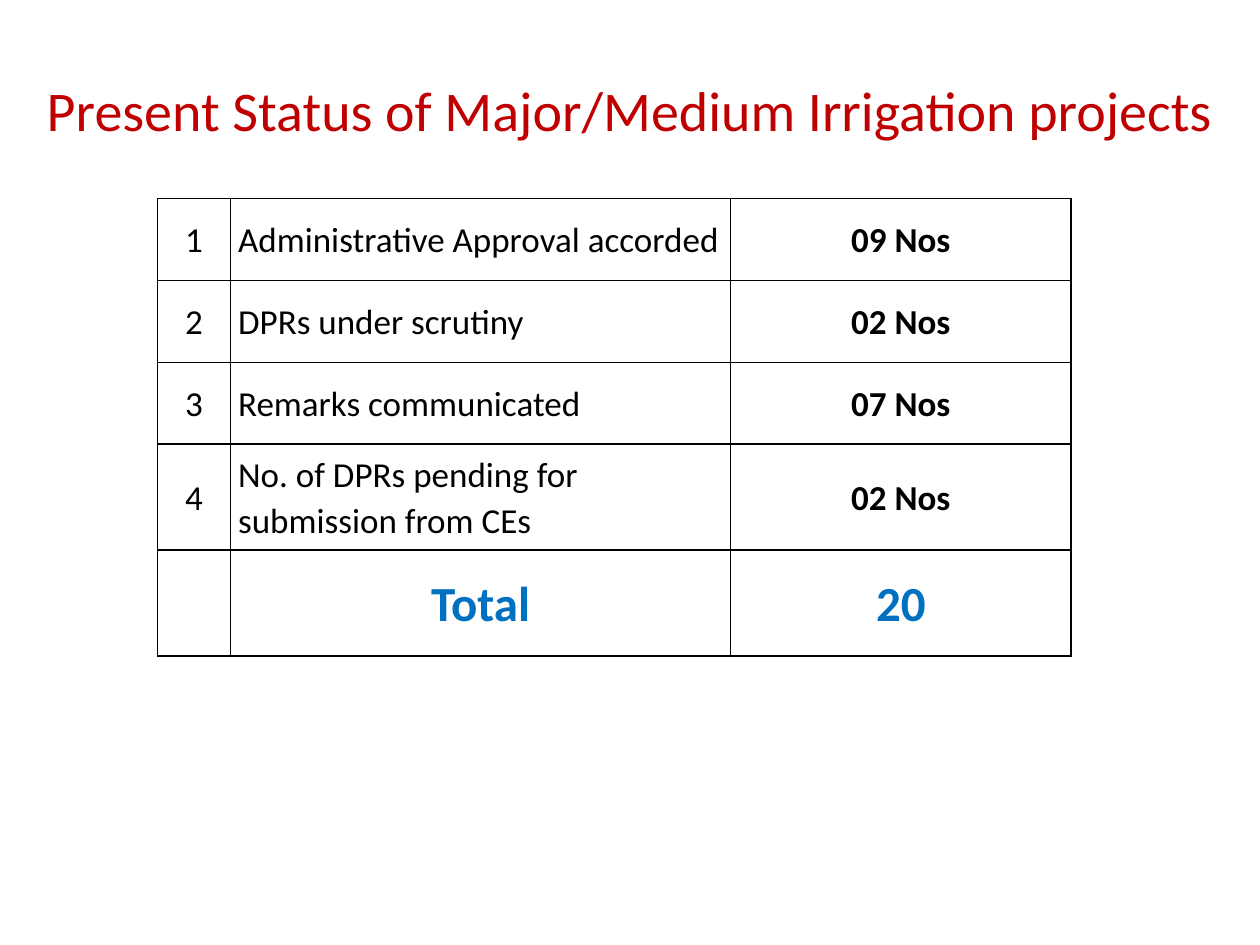
from dataclasses import dataclass

from lxml.etree import SubElement
from pptx import Presentation
from pptx.dml.color import RGBColor
from pptx.enum.text import MSO_ANCHOR as Anchor, PP_ALIGN as Align
from pptx.oxml.ns import qn
from pptx.util import Inches, Pt

FONT = "Calibri"
BLACK, WHITE, RED, BLUE = "000000", "FFFFFF", "C00000", "0070C0"
SLIDE_WIDTH, SLIDE_HEIGHT = Inches(10), Inches(7.5)
COLUMN_SHARES = (0.058, 0.397, 0.27)
SHORT_ROW, TALL_ROW = Inches(0.65), Inches(0.84)


@dataclass
class Style:
    size: int
    color: str = BLACK
    bold: bool = False
    align: Align = Align.CENTER


@dataclass
class Entry:
    texts: tuple[str, str, str]
    styles: tuple[Style, Style, Style]
    height: int = SHORT_ROW


NUMBER = Style(20)
LABEL = Style(20, align=Align.LEFT)
COUNT = Style(20, bold=True)
TOTAL = Style(28, BLUE, True)
ITEM = (NUMBER, LABEL, COUNT)

ENTRIES = [
    Entry(("1", "Administrative Approval accorded", "09 Nos"), ITEM),
    Entry(("2", "DPRs under scrutiny", "02 Nos"), ITEM),
    Entry(("3", "Remarks communicated", "07 Nos"), ITEM),
    Entry(("4", "No. of DPRs pending for submission from CEs", "02 Nos"), ITEM, TALL_ROW),
    Entry(("", "Total", "20"), (NUMBER, TOTAL, TOTAL), TALL_ROW),
]


def rgb(value: str) -> RGBColor:
    return RGBColor.from_string(value)


def across(share: float) -> int:
    return round(SLIDE_WIDTH * share)


def down(share: float) -> int:
    return round(SLIDE_HEIGHT * share)


def write(para, text: str, style: Style) -> None:
    para.alignment = style.align
    if not text:
        return
    run = para.add_run()
    run.text = text
    run.font.name = FONT
    run.font.size = Pt(style.size)
    run.font.bold = style.bold
    run.font.color.rgb = rgb(style.color)


def add_borders(cell, color: str, width: float) -> None:
    properties = cell._tc.get_or_add_tcPr()
    for side in ("lnL", "lnR", "lnT", "lnB"):
        line = SubElement(properties, qn(f"a:{side}"), w=str(Pt(width)))
        fill = SubElement(line, qn("a:solidFill"))
        SubElement(fill, qn("a:srgbClr"), val=color)


def fill_cell(cell, text: str, style: Style) -> None:
    cell.vertical_anchor = Anchor.MIDDLE
    cell.margin_left = cell.margin_right = Inches(0.06)
    cell.margin_top = cell.margin_bottom = 0
    add_borders(cell, BLACK, 1)
    cell.fill.solid()
    cell.fill.fore_color.rgb = rgb(WHITE)
    para = cell.text_frame.paragraphs[0]
    para.line_spacing = 1.07
    write(para, text, style)


def add_title(page, text: str) -> None:
    title = page.shapes.title
    title.left, title.top = across(0.025), down(0.04)
    title.width, title.height = across(0.95), down(0.15)
    title.text_frame.vertical_anchor = Anchor.MIDDLE
    write(title.text_frame.paragraphs[0], text, Style(32, RED))


def add_status_table(page, entries: list[Entry]) -> None:
    frame = page.shapes.add_table(
        len(entries), len(COLUMN_SHARES), across(0.125), down(0.21),
        across(sum(COLUMN_SHARES)), sum(entry.height for entry in entries))
    table = frame.table
    table.first_row = table.horz_banding = False
    for column, share in zip(table.columns, COLUMN_SHARES):
        column.width = across(share)
    for row, entry in zip(table.rows, entries):
        row.height = entry.height
        for cell, text, style in zip(row.cells, entry.texts, entry.styles):
            fill_cell(cell, text, style)


def main() -> None:
    deck = Presentation()
    deck.slide_width, deck.slide_height = SLIDE_WIDTH, SLIDE_HEIGHT
    page = deck.slides.add_slide(deck.slide_layouts[5])
    add_title(page, "Present Status of Major/Medium Irrigation projects")
    add_status_table(page, ENTRIES)
    deck.save("out.pptx")


if __name__ == "__main__":
    main()
